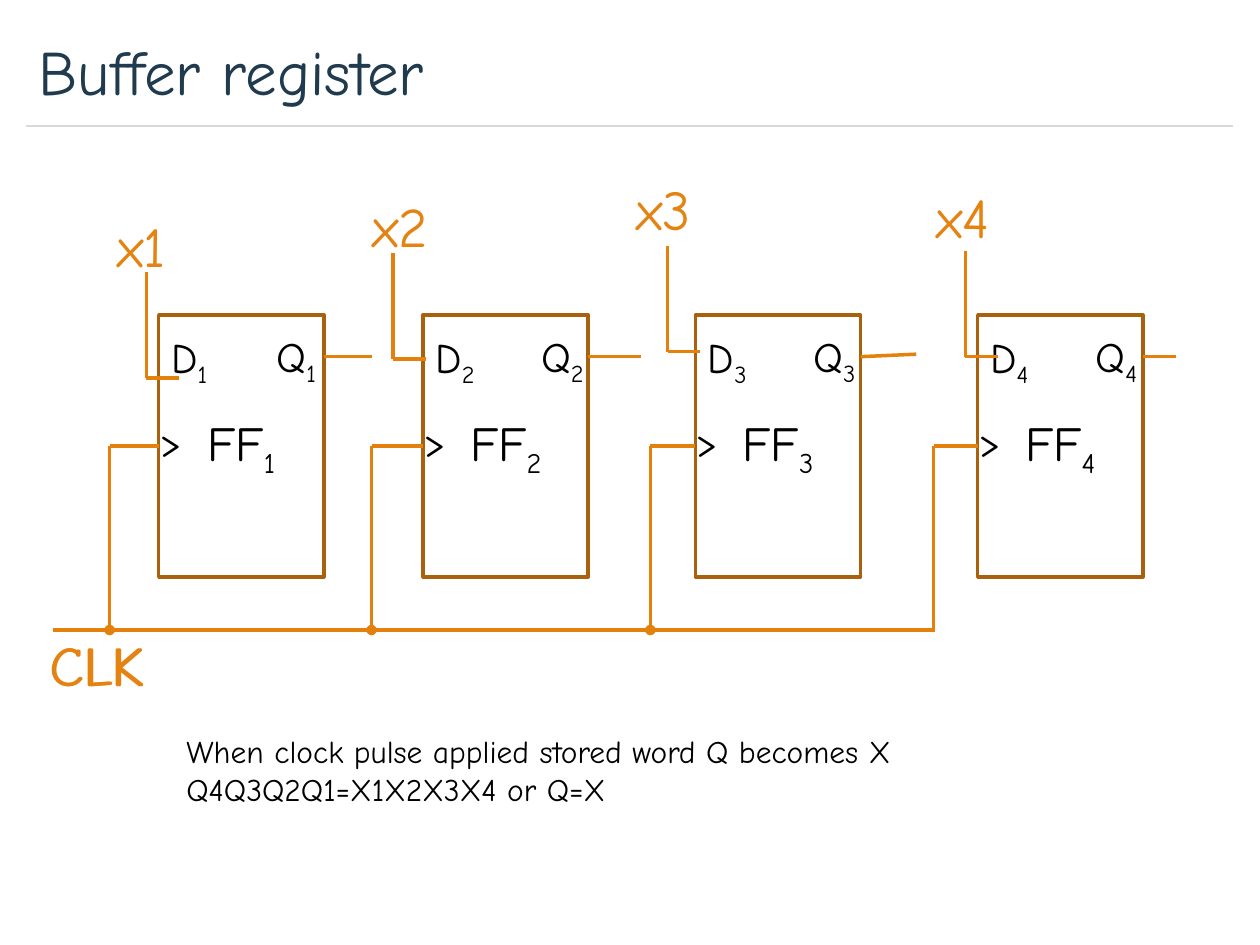
from lxml import etree
from pptx import Presentation
from pptx.dml.color import RGBColor
from pptx.enum.shapes import MSO_CONNECTOR, MSO_SHAPE
from pptx.enum.text import MSO_ANCHOR, MSO_AUTO_SIZE, PP_ALIGN
from pptx.oxml.ns import qn
from pptx.util import Cm, Pt

STRAIGHT = MSO_CONNECTOR.STRAIGHT
RECTANGLE = MSO_SHAPE.RECTANGLE
MIDDLE = MSO_ANCHOR.MIDDLE
FIT_SHAPE = MSO_AUTO_SIZE.SHAPE_TO_FIT_TEXT
NO_FIT = MSO_AUTO_SIZE.NONE
LEFT, CENTER = PP_ALIGN.LEFT, PP_ALIGN.CENTER
LEFT_SIDE = 1

NAVY = RGBColor(0x20, 0x3A, 0x4E)
BLACK = RGBColor(0, 0, 0)
BROWN = RGBColor(0xA9, 0x61, 0x0D)
WIRE = RGBColor(0xE4, 0x81, 0x0C)
ORANGE = RGBColor(0xE4, 0x83, 0x12)
GREY = RGBColor(0xD9, 0xD9, 0xD9)
FONT = "Comic Neue"

BOX_TOP, BOX_WIDTH, BOX_HEIGHT = 6.35, 3.33, 5.28
CLOCK_LEVEL = 12.7
OUTPUT_LEVEL = 7.19

# One stage per flip-flop, in centimetres; points are (x, y).
STAGES = [
    {"left": 3.2, "tap": 2.21, "elbow": (2.95, 7.62),
     "label": (1.88, 4.14), "output": (9.45 - 1.96, 7.19)},
    {"left": 8.53, "tap": 7.49, "elbow": (7.92, 7.24),
     "label": (7.09, 3.73), "output": (12.93, 7.19)},
    {"left": 14.02, "tap": 13.11, "elbow": (13.46, 7.09),
     "label": (12.4, 3.4), "output": (18.47, 7.14)},
    {"left": 19.71, "tap": 18.82, "elbow": (19.46, 7.19),
     "label": (18.44, 3.56), "output": (23.7, 7.19)},
]


def add_span(para, text, size, color, subscript=False):
    span = para.add_run()
    span.text = text
    for name, value in {"name": FONT, "size": Pt(size)}.items():
        setattr(span.font, name, value)
    span.font.color.rgb = color
    if subscript:
        span.font._element.set("baseline", "-25000")


def add_label(shapes, box, lines, size, color=BLACK, align=LEFT,
              wrap=True, index=None):
    """Add a text box; an index follows the last line as a subscript."""
    frame = shapes.add_textbox(*map(Cm, box)).text_frame
    for name, value in {"word_wrap": wrap, "auto_size": FIT_SHAPE}.items():
        setattr(frame, name, value)
    for number, line in enumerate(lines):
        para = frame.add_paragraph() if number else frame.paragraphs[0]
        para.alignment = align
        add_span(para, line, size, color)
    if index:
        add_span(para, index, size, color, subscript=True)


def add_wire(page, start, end, color=WIRE, width=2, dot=False):
    """Draw a straight line, with an optional junction dot at its start."""
    wire = page.shapes.add_connector(STRAIGHT, *map(Cm, (*start, *end)))
    wire.line.color.rgb = color
    wire.line.width = Pt(width)
    properties = wire._element.spPr
    if dot:
        line = properties.find(qn("a:ln"))
        etree.SubElement(line, qn("a:headEnd"), type="oval")
    etree.SubElement(properties, qn("a:effectLst"))
    return wire


def add_title(page, box, text):
    title = page.shapes.title
    left, top, width, height = box
    for name, value in zip(("left", "top", "width", "height"), box):
        setattr(title, name, Cm(value))
    frame = title.text_frame
    for name, value in {"vertical_anchor": MIDDLE, "auto_size": NO_FIT}.items():
        setattr(frame, name, value)
    frame.paragraphs[0].alignment = LEFT
    add_span(frame.paragraphs[0], text, 36, NAVY)
    bottom = top + height
    add_wire(page, (left, bottom), (left + width, bottom), GREY, 0.75)


def add_flip_flop(page, box, index):
    left, top, _, _ = box
    group = page.shapes.add_group_shape()
    body = group.shapes.add_shape(RECTANGLE, *map(Cm, box))
    body.shadow.inherit = False
    body.fill.background()
    body.line.color.rgb = BROWN
    body.line.width = Pt(2)
    body.text_frame.vertical_anchor = MIDDLE
    para = body.text_frame.paragraphs[0]
    para.alignment = CENTER
    add_span(para, "FF", 28, BLACK)
    add_span(para, index, 28, BLACK, subscript=True)
    pins = [("D", 0, 0.2, 1.32, index), ("Q", 2.13, 0.18, 1.37, index),
            (">", -0.24, 1.9, 0.94, None)]
    for name, right, down, width, subscript in pins:
        add_label(group.shapes, (left + right, top + down, width, 1.27),
                  [name], 24, wrap=False, index=subscript)
    return body


def add_stage(page, stage, number, last):
    """Add one flip-flop with its clock, data and output wires."""
    left, tap = stage["left"], stage["tap"]
    body = add_flip_flop(page, (left, BOX_TOP, BOX_WIDTH, BOX_HEIGHT),
                         str(number))

    clock_pin = BOX_TOP + BOX_HEIGHT / 2
    add_wire(page, (tap, CLOCK_LEVEL), (tap, clock_pin), dot=not last)
    clock = add_wire(page, (tap, clock_pin), (left, clock_pin))
    clock.end_connect(body, LEFT_SIDE)

    x, y = stage["elbow"]
    add_wire(page, (x, y), (x, y - 2.13))
    add_wire(page, (x, y), (x + 0.66, y))
    add_wire(page, (left + BOX_WIDTH, OUTPUT_LEVEL), stage["output"])
    add_label(page.shapes, (*stage["label"], 1.96, 1.63), [f"x{number}"],
              32, ORANGE, CENTER)


def add_clock_line(page, left, right):
    add_wire(page, (left, CLOCK_LEVEL), (right, CLOCK_LEVEL))
    # Two slightly offset labels give the heavier lettering.
    for shift in (0, 0.03):
        add_label(page.shapes, (left - 0.56 + shift, 12.58, 2.87, 1.63),
                  ["CLK"], 32, ORANGE, CENTER)


def main():
    deck = Presentation()
    deck.slide_width, deck.slide_height = Cm(25.4), Cm(19.05)
    page = deck.slides.add_slide(deck.slide_layouts[5])
    add_title(page, (0.53, 0.3, 24.33, 2.24), "Buffer register")
    for number, stage in enumerate(STAGES, 1):
        add_stage(page, stage, number, last=number == len(STAGES))
    add_clock_line(page, 1.07, 18.85)
    add_label(page.shapes, (3.51, 14.63, 17.53, 1.8),
              ["When clock pulse applied stored word Q becomes X",
               "Q4Q3Q2Q1=X1X2X3X4 or Q=X"], 18)
    deck.save("out.pptx")


if __name__ == "__main__":
    main()
